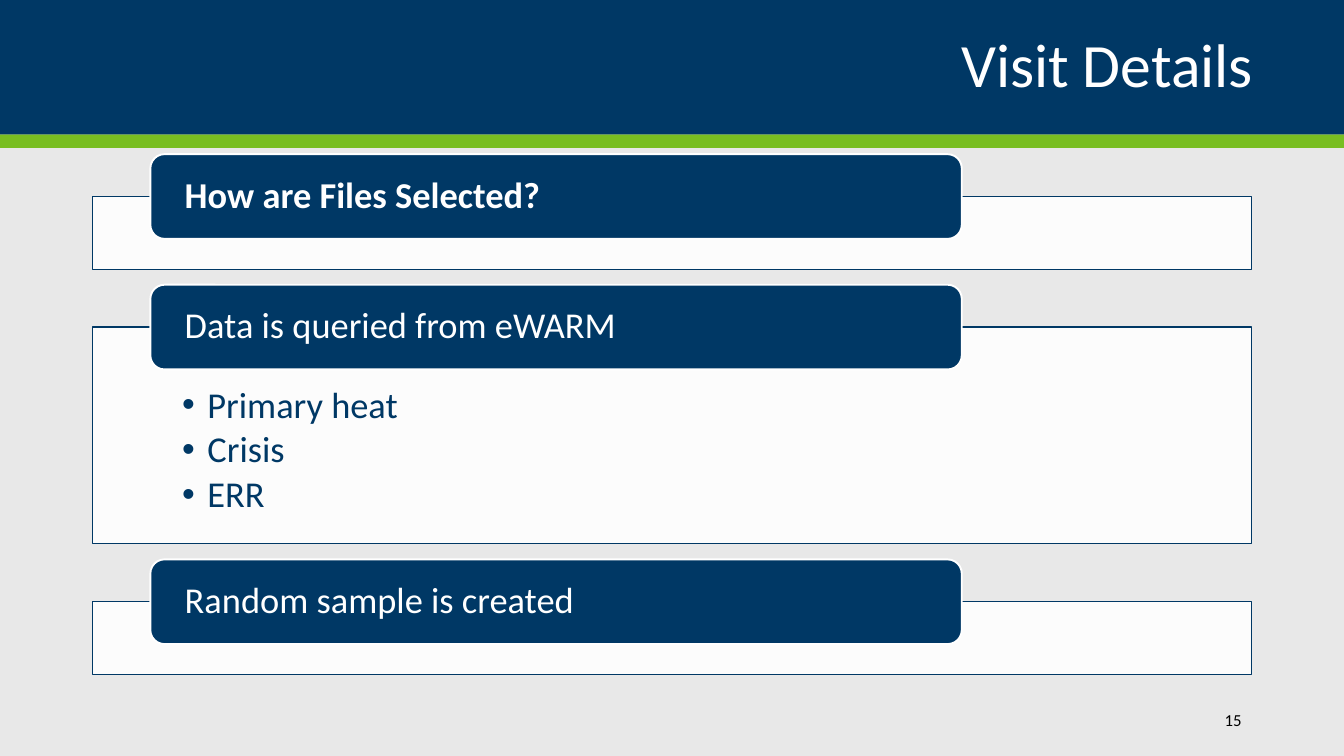
from dataclasses import dataclass

from lxml import etree
from pptx import Presentation
from pptx import util as u
from pptx.dml.color import RGBColor
from pptx.enum import shapes, text
from pptx.oxml import ns

COLUMNS, ROWS = 160, 90
CELL = u.Inches(7.5) / ROWS
NAVY, GREEN, WHITE, GRAY, BLACK = "003865", "78BE21", "FFFFFF", "E8E8E8", "000000"

PANEL_LEFT, PANEL_WIDTH, PANEL_TOP, PANEL_GAP = 11, 138, 23.4, 6.9
TAB_LEFT, TAB_WIDTH, TAB_HEIGHT = 17.9, 96.6, 10.08


@dataclass
class Section:
    heading: str
    rows: float
    items: tuple[str, ...] = ()
    bold: bool = False


SECTIONS = (
    Section("How are Files Selected?", 8.64, bold=True),
    Section("Data is queried from eWARM", 25.8, ("Primary heat", "Crisis", "ERR")),
    Section("Random sample is created", 8.64),
)


def cells(count: float) -> u.Emu:
    return u.Emu(round(count * CELL))


def color(value: str) -> RGBColor:
    return RGBColor.from_string(value)


def add_block(page, kind, left: float, top: float, width: float, height: float,
              fill: str, line: str | None = None, weight: float = 0, opacity: int = 100):
    """Add a filled preset shape placed in grid cells; opacity is a percentage."""
    block = page.shapes.add_shape(kind, *map(cells, (left, top, width, height)))
    block.shadow.inherit = False
    block.fill.solid()
    block.fill.fore_color.rgb = color(fill)
    if opacity < 100:
        shade = block._element.spPr.find(ns.qn("a:solidFill"))[0]
        etree.SubElement(shade, ns.qn("a:alpha"), val=str(opacity * 1000))
    if line:
        block.line.color.rgb = color(line)
        block.line.width = u.Pt(weight)
    else:
        block.line.fill.background()
    return block


def add_bullet(para) -> None:
    properties = para._p.get_or_add_pPr()
    properties.set("marL", str(u.Inches(0.25)))
    properties.set("indent", str(-u.Inches(0.25)))
    font = etree.SubElement(properties, ns.qn("a:buFont"))
    font.set("typeface", "Arial")
    etree.SubElement(properties, ns.qn("a:buChar")).set("char", "•")


def write(box, *lines: str, size: float, ink: str, bold: bool = False,
          align=text.PP_ALIGN.LEFT, anchor=text.MSO_ANCHOR.MIDDLE, side: float = 1.2,
          top: float = 0, bottom: float = 0, after: float = 0, bullet: bool = False) -> None:
    """Fill the box with one paragraph per line; margins are in grid cells."""
    frame = box.text_frame
    frame.word_wrap = True
    frame.vertical_anchor = anchor
    frame.margin_left = frame.margin_right = cells(side)
    frame.margin_top, frame.margin_bottom = cells(top), cells(bottom)
    for index, line in enumerate(lines):
        para = frame.add_paragraph() if index else frame.paragraphs[0]
        para.alignment = align
        para.line_spacing = 0.9
        para.space_after = u.Pt(after)
        if bullet:
            add_bullet(para)
        span = para.add_run()
        span.text = line
        span.font.name = "Calibri"
        span.font.size = u.Pt(size)
        span.font.bold = bold
        span.font.color.rgb = color(ink)


def add_section(page, section: Section, top: float) -> None:
    """Draw a panel with its heading tab centred on the panel's top edge."""
    panel = add_block(page, shapes.MSO_SHAPE.RECTANGLE, PANEL_LEFT, top, PANEL_WIDTH,
                      section.rows, WHITE, NAVY, 0.85, opacity=90)
    if section.items:
        write(panel, *section.items, size=26, ink=NAVY, anchor=text.MSO_ANCHOR.TOP,
              side=10.7, top=7.1, bottom=2.4, after=3.9, bullet=True)
    tab = add_block(page, shapes.MSO_SHAPE.ROUNDED_RECTANGLE, TAB_LEFT,
                    top - TAB_HEIGHT / 2, TAB_WIDTH, TAB_HEIGHT, NAVY, WHITE, 1.35)
    write(tab, section.heading, size=26, ink=WHITE, bold=section.bold, side=3.6)


def main() -> None:
    deck = Presentation()
    deck.slide_width, deck.slide_height = cells(COLUMNS), cells(ROWS)
    page = deck.slides.add_slide(deck.slide_layouts[6])
    page.background.fill.solid()
    page.background.fill.fore_color.rgb = color(GRAY)

    add_block(page, shapes.MSO_SHAPE.RECTANGLE, 0, 16, COLUMNS, 1.6, GREEN)
    title = add_block(page, shapes.MSO_SHAPE.RECTANGLE, 0, 0, COLUMNS, 16, NAVY)
    write(title, "Visit Details", size=44, ink=WHITE, align=text.PP_ALIGN.RIGHT,
          side=10.8, top=0.6, bottom=0.6)

    top = PANEL_TOP
    for section in SECTIONS:
        add_section(page, section, top)
        top += section.rows + PANEL_GAP

    number = page.shapes.add_textbox(*map(cells, (129.8, 83.4, 19.2, 4.8)))
    write(number, "15", size=12, ink=BLACK, align=text.PP_ALIGN.RIGHT)
    deck.save("out.pptx")


if __name__ == "__main__":
    main()
